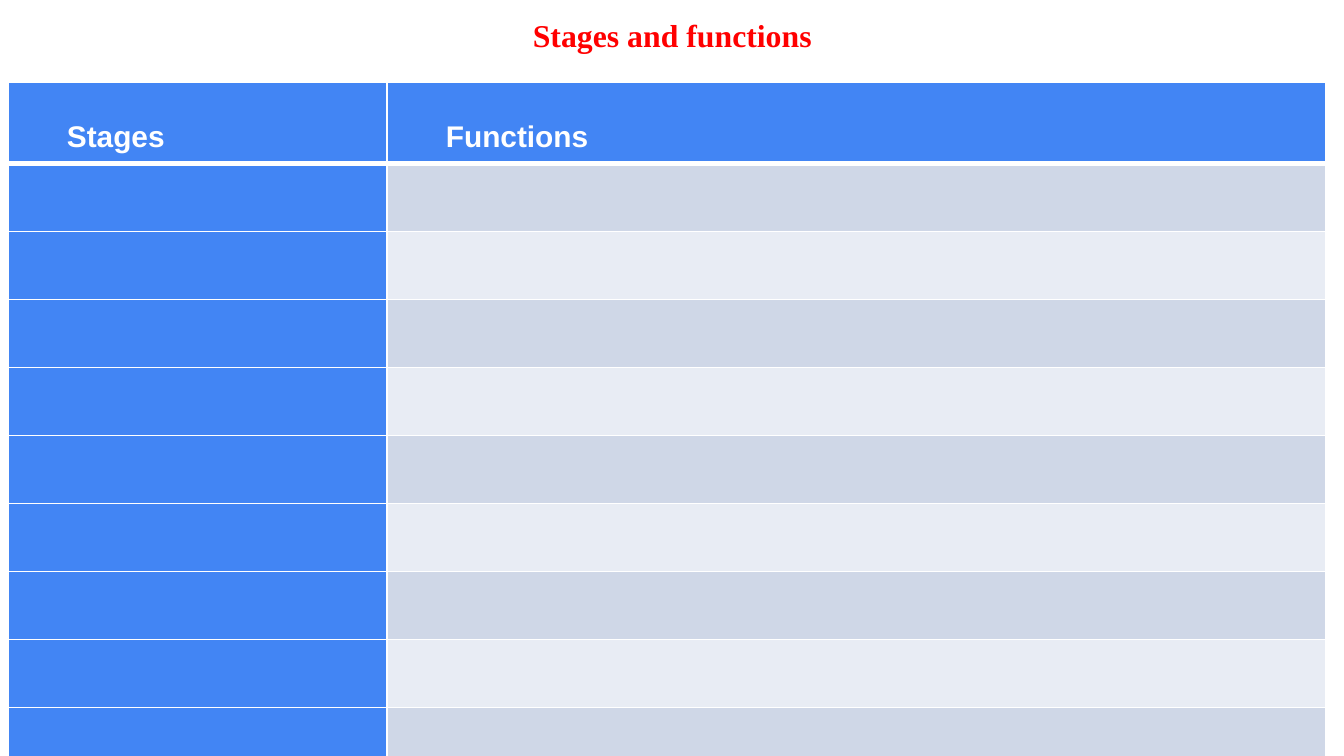
from dataclasses import dataclass

from lxml import etree
from pptx import Presentation, util as u
from pptx.dml.color import RGBColor
from pptx.enum import text
from pptx.oxml import ns

EMU_PER_PX = 914400 / 134.4
COLORS = {
    "title": "FF0000",
    "blue": "4285F4",
    "dark_band": "CFD7E7",
    "light_band": "E8ECF4",
    "white": "FFFFFF",
}


@dataclass(frozen=True)
class Column:
    heading: str
    width: int
    bands: tuple[str, str]


@dataclass(frozen=True)
class Font:
    name: str
    size: int
    color: str


COLUMNS = (
    Column("Stages", 379, ("blue", "blue")),
    Column("Functions ", 939, ("dark_band", "light_band")),
)
BODY_ROWS = 9
HEADER_HEIGHT, ROW_HEIGHT = 62, 68
TITLE_FONT = Font("Times New Roman", 17, "title")
HEADING_FONT = Font("Arial", 16, "white")


def px(n: int) -> u.Emu:
    return u.Emu(round(n * EMU_PER_PX))


def rgb(name: str) -> RGBColor:
    return RGBColor.from_string(COLORS[name])


def add_run(p, words: str, font: Font) -> None:
    r = p.add_run()
    r.text = words
    r.font.name = font.name
    r.font.size = u.Pt(font.size)
    r.font.bold = True
    r.font.color.rgb = rgb(font.color)


def add_borders(cell, top: int, bottom: int) -> None:
    tc_pr = cell._tc.get_or_add_tcPr()
    sides = (("lnL", 1), ("lnR", 1), ("lnT", top), ("lnB", bottom))
    for i, (side, width) in enumerate(sides):
        ln = etree.Element(ns.qn(f"a:{side}"), w=str(u.Pt(width)))
        fill = etree.SubElement(ln, ns.qn("a:solidFill"))
        etree.SubElement(fill, ns.qn("a:srgbClr"), val=COLORS["white"])
        tc_pr.insert(i, ln)


def style_cell(cell, color: str, top: int = 1, bottom: int = 1) -> None:
    cell.fill.solid()
    cell.fill.fore_color.rgb = rgb(color)
    cell.margin_left = cell.margin_right = px(8)
    cell.margin_top = cell.margin_bottom = px(5)
    add_borders(cell, top, bottom)


def add_heading(cell, words: str) -> None:
    p = cell.text_frame.paragraphs[0]
    p.line_spacing = 2.0
    p_pr = p._p.get_or_add_pPr()
    p_pr.set("marL", "0")
    p_pr.set("indent", str(px(51)))
    add_run(p, words, HEADING_FONT)


def add_stage_table(s) -> None:
    width = sum(c.width for c in COLUMNS)
    height = HEADER_HEIGHT + BODY_ROWS * ROW_HEIGHT
    table = s.shapes.add_table(
        BODY_ROWS + 1, len(COLUMNS), px(8), px(82), px(width), px(height)
    ).table
    for i, row in enumerate(table.rows):
        row.height = px(ROW_HEIGHT if i else HEADER_HEIGHT)
    for j, column in enumerate(COLUMNS):
        table.columns[j].width = px(column.width)
        header = table.cell(0, j)
        style_cell(header, "blue", bottom=3)
        add_heading(header, column.heading)
        for i in range(1, BODY_ROWS + 1):
            color = column.bands[(i - 1) % 2]
            style_cell(table.cell(i, j), color, top=3 if i == 1 else 1)


def format_title(sp) -> None:
    sp.left, sp.top, sp.width, sp.height = px(481), px(3), px(383), px(66)
    tf = sp.text_frame
    tf.word_wrap = True
    tf.auto_size = text.MSO_AUTO_SIZE.SHAPE_TO_FIT_TEXT
    tf.vertical_anchor = text.MSO_ANCHOR.TOP
    tf.margin_left = tf.margin_right = px(13)
    tf.margin_top = tf.margin_bottom = px(13)
    p = tf.paragraphs[0]
    p.alignment = text.PP_ALIGN.CENTER
    p.line_spacing = 1.0
    p.space_before = u.Pt(0)
    add_run(p, "Stages and functions", TITLE_FONT)


def main() -> None:
    prs = Presentation()
    prs.slide_width, prs.slide_height = px(1344), px(756)
    s = prs.slides.add_slide(prs.slide_layouts[5])
    s.background.fill.solid()
    s.background.fill.fore_color.rgb = rgb("white")
    format_title(s.shapes.title)
    add_stage_table(s)
    prs.save("out.pptx")


if __name__ == "__main__":
    main()
